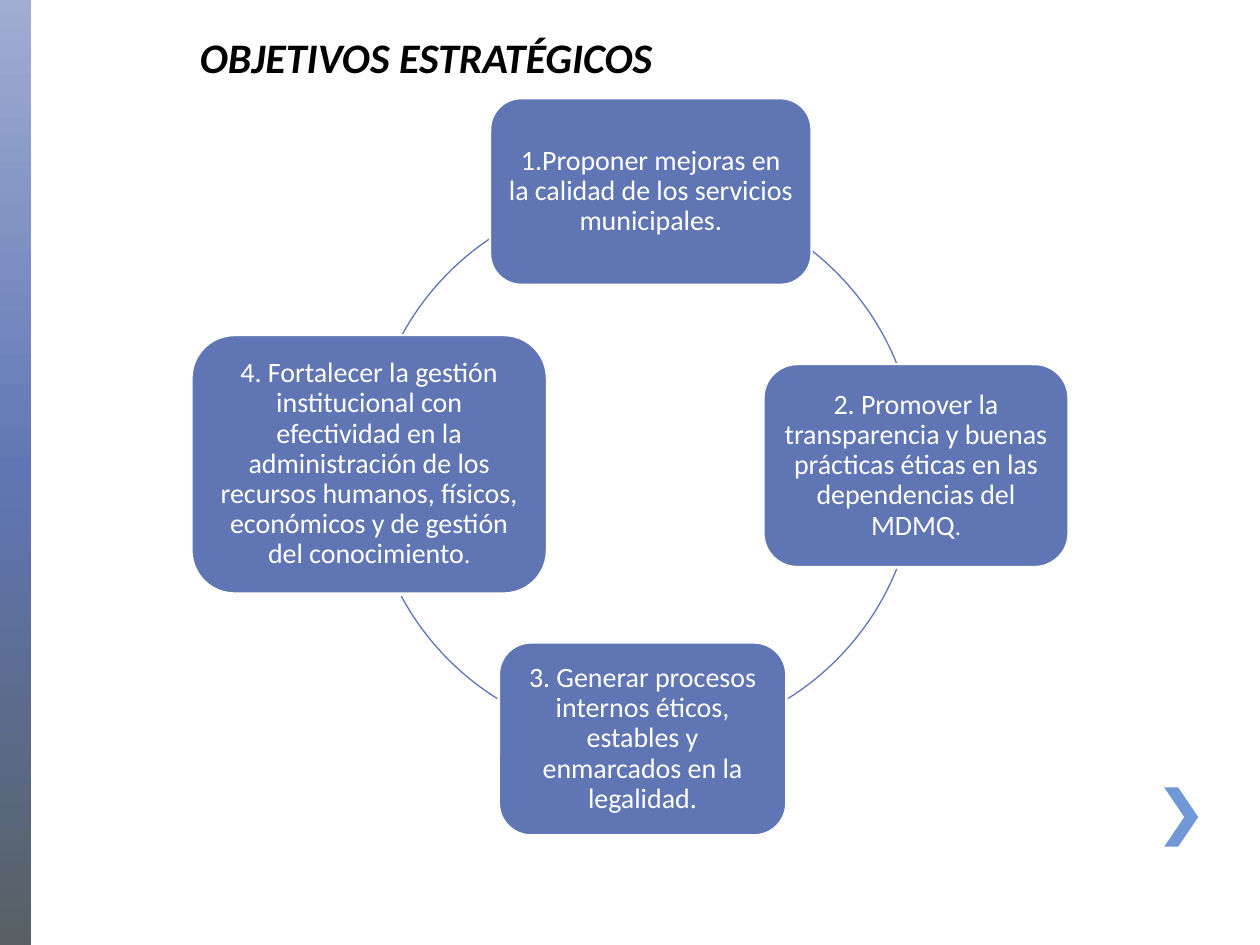
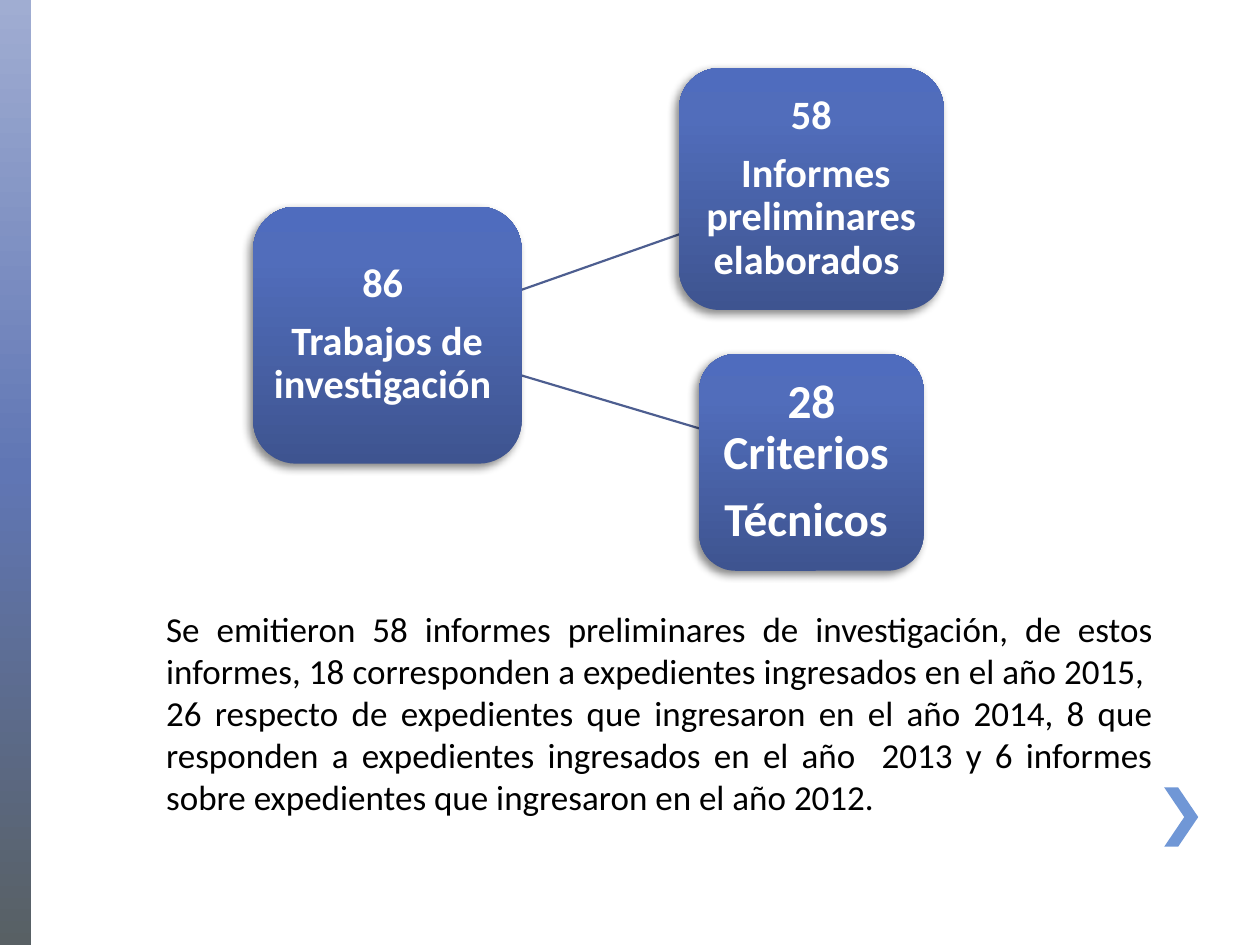
from lxml import etree
from pptx import Presentation
from pptx import util as u
from pptx.dml.color import RGBColor
from pptx.enum import shapes, text
from pptx.oxml import parse_xml
from pptx.oxml.ns import nsdecls, qn

# The slide is a grid of 100 columns by 75 rows
COLS, ROWS = 100, 75
CELL = u.Inches(0.1)

FONT = "Calibri"
BLACK = RGBColor(0x00, 0x00, 0x00)
WHITE = RGBColor(0xFF, 0xFF, 0xFF)
INDIGO = RGBColor(0x60, 0x76, 0xB4)
SKY = RGBColor(0x70, 0x97, 0xD6)
SLATE = RGBColor(0x4D, 0x5E, 0x90)
BAND_STOPS = [(0, RGBColor(0xA0, 0xAD, 0xD2)), (50, INDIGO), (100, RGBColor(0x58, 0x60, 0x64))]
CARD_STOPS = [(0, RGBColor(0x3E, 0x54, 0x90)), (80, RGBColor(0x51, 0x6D, 0xBB)),
              (100, RGBColor(0x4F, 0x6C, 0xBE))]

RING_CENTRE, RING_RADIUS = (51, 37), 21.75
# (left, top, width, height), text, size of the final full stop
OBJECTIVES = [
    ((38.9, 7.8, 25.5, 14.8),
     "1.Proponer mejoras en la calidad de los servicios municipales", 16),
    ((60.6, 28.9, 24.2, 16.1),
     "2. Promover la transparencia y buenas prácticas éticas en las dependencias del MDMQ", 14),
    ((39.6, 51, 22.8, 15.3),
     "3. Generar procesos internos éticos, estables y enmarcados en la legalidad", 16),
    ((15.2, 26.6, 28.2, 20.5),
     "4. Fortalecer la gestión institucional con efectividad en la administración de los "
     "recursos humanos, físicos, económicos y de gestión del conocimiento", 14),
]
# Degrees, clockwise from the right
ARCS = [(308, 338), (22, 58), (122, 151.7), (208.6, 236)]

CARDS = [
    ((20.1, 16.4, 21.3, 20.4), ["86 ", "Trabajos de investigación "], 23, 0.06),
    ((53.9, 5.4, 21, 19.2), ["58", " Informes preliminares elaborados "], 23, 0.06),
    ((55.5, 28.1, 17.8, 17.2), ["28 Criterios ", "Técnicos "], 27, 0.07),
]
LINKS = [((41.4, 23), (53.9, 18.6)), ((41.4, 29.8), (55.5, 34))]
SUMMARY = (
    "Se emitieron 58 informes preliminares de investigación, de estos informes, "
    "18 corresponden a expedientes ingresados en el año 2015,  26 respecto de expedientes "
    "que ingresaron en el año 2014, 8 que responden a expedientes ingresados en el año  2013 "
    "y 6 informes sobre expedientes que ingresaron en el año 2012. ")


def grid(*cells):
    return [round(c * CELL) for c in cells]


def add_preset(s, kind, box, fill=None, line=None, width=1.25):
    sp = s.shapes.add_shape(kind, *grid(*box))
    sp.shadow.inherit = False
    if fill is None:
        sp.fill.background()
    else:
        sp.fill.solid()
        sp.fill.fore_color.rgb = fill
    if line is None:
        sp.line.fill.background()
    else:
        sp.line.color.rgb = line
        sp.line.width = u.Pt(width)
    return sp


def set_gradient(sp, stops, angle):
    """Replace the solid fill by a linear gradient of (percent, colour) stops."""
    gs = "".join(f'<a:gs pos="{pos * 1000}"><a:srgbClr val="{rgb}"/></a:gs>' for pos, rgb in stops)
    xml = (f'<a:gradFill {nsdecls("a")} rotWithShape="1"><a:gsLst>{gs}</a:gsLst>'
           f'<a:lin ang="{angle * 60000}" scaled="0"/></a:gradFill>')
    pr = sp._element.spPr
    pr.replace(pr.find(qn("a:solidFill")), parse_xml(xml))


def set_shadow(sp):
    effects = sp._element.spPr.find(qn("a:effectLst"))
    effects.append(parse_xml(
        f'<a:outerShdw {nsdecls("a")} blurRad="{u.Pt(5)}" dist="{u.Pt(3)}" dir="8100000" '
        'algn="ctr" rotWithShape="0"><a:srgbClr val="000000"><a:alpha val="45000"/>'
        '</a:srgbClr></a:outerShdw>'))


def add_run(p, words, size, color, bold=False, italic=False):
    r = p.add_run()
    r.text = words
    f = r.font
    f.name, f.size, f.bold, f.italic = FONT, u.Pt(size), bold, italic
    f.color.rgb = color


def add_text(s, box, words, align, **style):
    tf = s.shapes.add_textbox(*grid(*box)).text_frame
    tf.word_wrap = True
    p = tf.paragraphs[0]
    p.alignment = align
    add_run(p, words, **style)


def write_inside(sp, paragraphs, inset):
    """Centre paragraphs in a shape; each is a list of (words, size) runs."""
    tf = sp.text_frame
    tf.word_wrap = True
    tf.vertical_anchor = text.MSO_ANCHOR.MIDDLE
    tf.margin_left = tf.margin_right = tf.margin_top = tf.margin_bottom = u.Inches(inset)
    for i, runs in enumerate(paragraphs):
        p = tf.add_paragraph() if i else tf.paragraphs[0]
        p.alignment = text.PP_ALIGN.CENTER
        p.line_spacing = 0.9
        p.space_after = u.Pt(round(0.35 * runs[0][1]))
        for words, size in runs:
            add_run(p, words, size, WHITE, bold=len(paragraphs) > 1)


def add_objective(s, box, words, stop_size):
    sp = add_preset(s, shapes.MSO_SHAPE.ROUNDED_RECTANGLE, box, INDIGO, WHITE)
    write_inside(sp, [[(words, 16), (".", stop_size)]], 0.07)


def add_arc(s, start, end):
    (x, y), r = RING_CENTRE, RING_RADIUS
    sp = add_preset(s, shapes.MSO_SHAPE.ARC, (x - r, y - r, 2 * r, 2 * r), line=INDIGO, width=0.75)
    # An angle is stored in 60000ths of a degree, an adjustment in 100000ths
    sp.adjustments[0], sp.adjustments[1] = start * 0.6, end * 0.6


def add_card(s, box, lines, size, inset):
    sp = add_preset(s, shapes.MSO_SHAPE.ROUNDED_RECTANGLE, box, INDIGO)
    set_gradient(sp, CARD_STOPS, 270)
    set_shadow(sp)
    write_inside(sp, [[(line, size)] for line in lines], inset)


def add_link(s, start, end):
    c = s.shapes.add_connector(shapes.MSO_CONNECTOR.STRAIGHT, *grid(*start, *end))
    c.line.color.rgb = SLATE
    c.line.width = u.Pt(1.25)
    etree.SubElement(c._element.spPr, qn("a:effectLst"))


def add_slide(prs):
    """Add a blank slide with the side band and the corner chevron."""
    s = prs.slides.add_slide(prs.slide_layouts[6])
    band = add_preset(s, shapes.MSO_SHAPE.RECTANGLE, (0, 0, 2.5, ROWS), INDIGO)
    set_gradient(band, BAND_STOPS, 90)
    chevron = add_preset(s, shapes.MSO_SHAPE.CHEVRON, (92.4, 62.5, 2.7, 4.7), SKY)
    chevron.adjustments[0] = 0.59
    return s


def build_objectives(prs):
    s = add_slide(prs)
    for arc in ARCS:
        add_arc(s, *arc)
    for objective in OBJECTIVES:
        add_objective(s, *objective)
    add_text(s, (1.9, 2, 64.6, 5), "OBJETIVOS ESTRATÉGICOS ", text.PP_ALIGN.CENTER,
             size=24, color=BLACK, bold=True, italic=True)


def build_results(prs):
    s = add_slide(prs)
    for link in LINKS:
        add_link(s, *link)
    for card in CARDS:
        add_card(s, *card)
    add_text(s, (12.2, 47.7, 80.3, 20.9), SUMMARY, text.PP_ALIGN.JUSTIFY, size=20, color=BLACK)


def main():
    prs = Presentation()
    prs.slide_width, prs.slide_height = grid(COLS, ROWS)
    build_objectives(prs)
    build_results(prs)
    prs.save("out.pptx")


if __name__ == "__main__":
    main()
